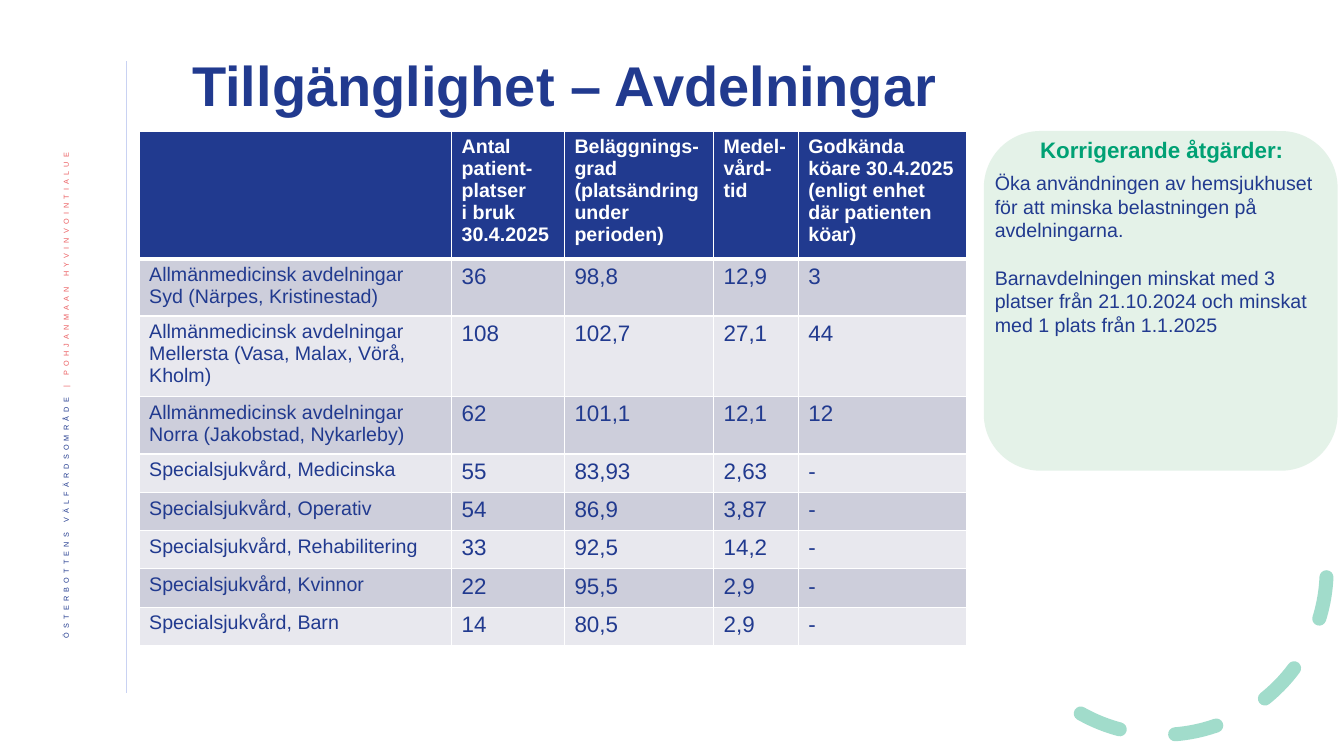
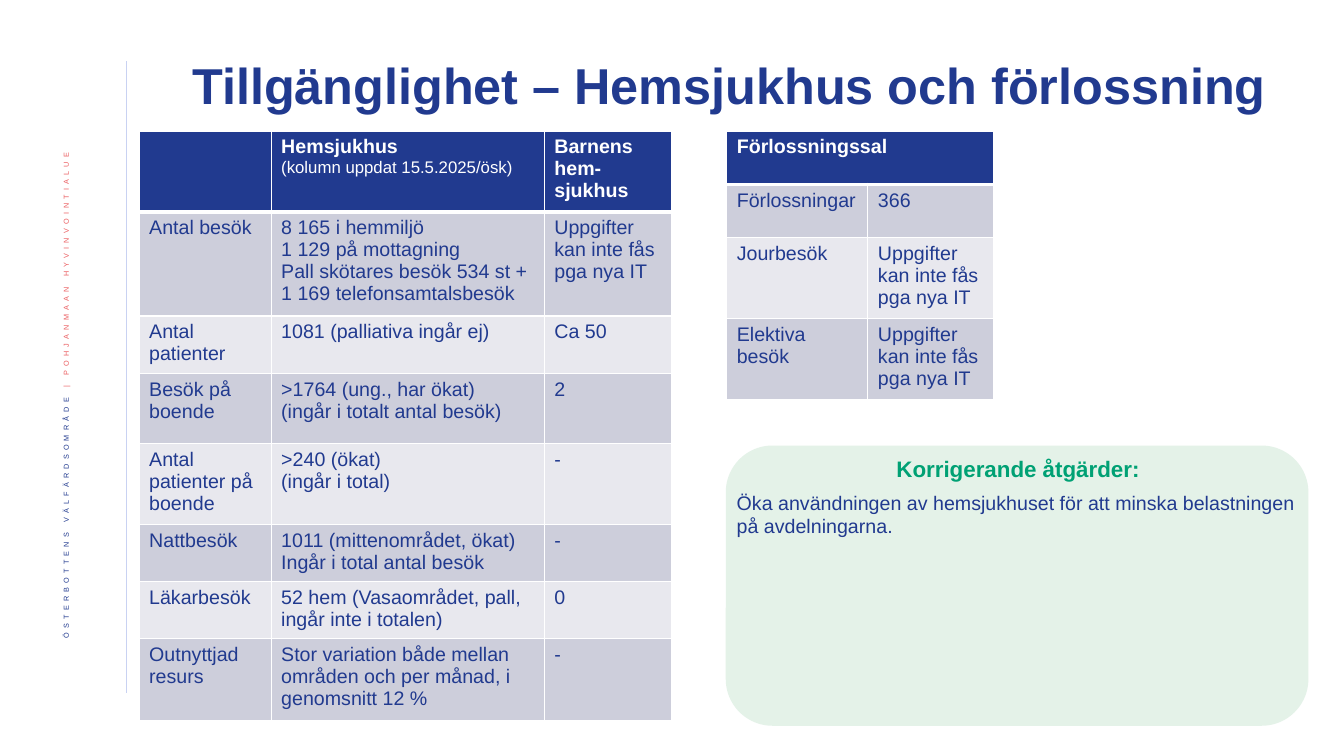
from lxml.etree import SubElement
from pptx import Presentation
from pptx.dml.color import RGBColor
from pptx.enum.dml import MSO_LINE
from pptx.enum.shapes import MSO_CONNECTOR, MSO_SHAPE
from pptx.enum.text import MSO_ANCHOR, PP_ALIGN
from pptx.oxml.ns import qn
from pptx.util import Inches, Pt

HUES = {
    "navy": "213A8F", "green": "00A174", "mint": "85C598", "coral": "EB5C5F",
    "rule": "C9D2F2", "white": "FFFFFF", "dark": "CDCEDB", "light": "E8E8EE",
}
FONT = "Arial"
UNIT = 0.1  # side of a grid square, in inches
WIDE, HIGH = 133.33, 75
TOP = 13  # row where the content starts


def grid(*cells):
    return [Inches(cell * UNIT) for cell in cells]


def hue(name):
    return RGBColor.from_string(HUES[name])


def fade(shape, share):
    """Make the shape's own colours opaque by the given percentage only."""
    for tint in shape._element.iter(qn("a:srgbClr")):
        SubElement(tint, qn("a:alpha"), val=str(share * 1000))


def edge(cell, low):
    """Draw white cell borders; low is the width of the bottom one."""
    props = cell._tc.get_or_add_tcPr()
    for spot, (side, size) in enumerate(zip("LRTB", (1, 1, 1, low))):
        line = SubElement(props, qn(f"a:ln{side}"), w=str(Pt(size)))
        fill = SubElement(line, qn("a:solidFill"))
        SubElement(fill, qn("a:srgbClr"), val=HUES["white"])
        props.insert(spot, line)


class Deck:
    def __init__(self):
        self.file = Presentation()
        self.file.slide_width, self.file.slide_height = grid(WIDE, HIGH)
        self.page = None

    def start(self, title, size, width):
        self.page = self.file.slides.add_slide(self.file.slide_layouts[6])
        self.band()
        frame = self.box(18.1, 4.5, width, 8.5, MSO_ANCHOR.MIDDLE)
        frame.text = title
        frame.paragraphs[0].line_spacing = 0.9
        self.style(frame.paragraphs[0], size, "navy", True)

    def style(self, item, size, tint, bold=False):
        font = item.font
        font.name, font.size, font.bold = FONT, Pt(size), bold
        font.color.rgb = hue(tint)

    def box(self, x, y, w, h, anchor=MSO_ANCHOR.TOP):
        frame = self.page.shapes.add_textbox(*grid(x, y, w, h)).text_frame
        frame.word_wrap = True
        frame.vertical_anchor = anchor
        return frame

    def band(self):
        """Add the thin rule and the upright name at the left edge."""
        rule = self.page.shapes.add_connector(
            MSO_CONNECTOR.STRAIGHT, *grid(12.5, 6.1, 12.5, 68.8))
        rule.line.color.rgb = hue("rule")
        rule.line.width = Pt(0.5)
        SubElement(rule._element.spPr, qn("a:effectLst"))
        frame = self.box(4.2, 14.2, 5.2, 57.3, MSO_ANCHOR.MIDDLE)
        frame._txBody.bodyPr.set("vert", "vert270")
        para = frame.paragraphs[0]
        para.alignment, para.line_spacing = PP_ALIGN.RIGHT, 0.9
        for text, tint in (("ÖSTERBOTTENS VÄLFÄRDSOMRÅDE ", "navy"),
                           ("| POHJANMAAN HYVINVOINTIALUE", "coral")):
            run = para.add_run()
            run.text = text
            self.style(run, 9, tint)
            props = run._r.get_or_add_rPr()
            props.set("baseline", "30000")
            props.set("spc", "300")

    def entry(self, para, size, tint, bold=False):
        """Style a cell's paragraph and its end mark, which sets row height."""
        self.style(para, size, tint, bold)
        SubElement(para._p, qn("a:endParaRPr"), sz=str(size * 100))

    def table(self, x, cols, rows, data, size=14):
        """Fill a table; size is the text size right of the first column.

        A row that is shorter than the table has its last cell merged.
        """
        table = self.page.shapes.add_table(
            len(rows), len(cols), *grid(x, TOP, sum(cols), sum(rows))).table
        for col, width in zip(table.columns, grid(*cols)):
            col.width = width
        for row, height in zip(table.rows, grid(*rows)):
            row.height = height
        for r, texts in enumerate(data):
            head = r == 0
            shade = "navy" if head else ("light", "dark")[r % 2]
            for c in range(len(cols)):
                cell = table.cell(r, c)
                cell.fill.solid()
                cell.fill.fore_color.rgb = hue(shade)
                edge(cell, 3 if head else 1)
                if c >= len(texts):
                    continue
                cell.text = texts[c]
                for n, para in enumerate(cell.text_frame.paragraphs):
                    if head:
                        self.entry(para, 12 if n else 14, "white", n == 0)
                    else:
                        self.entry(para, size if c else 14, "navy")
            if len(texts) < len(cols):
                table.cell(r, len(texts) - 1).merge(
                    table.cell(r, len(cols) - 1))

    def card(self, x, y, w, h, notes, drop=0):
        """Add the green card; drop moves its text down."""
        back = self.page.shapes.add_shape(
            MSO_SHAPE.ROUNDED_RECTANGLE, *grid(x, y, w, h))
        back.shadow.inherit = False
        back.fill.solid()
        back.fill.fore_color.rgb = hue("mint")
        back.line.fill.background()
        fade(back, 22)
        frame = self.box(x + 0.1, y + drop, w, h - drop)
        frame.text = "\n".join(["Korrigerande åtgärder:", *notes])
        for n, para in enumerate(frame.paragraphs):
            if n == 0:
                para.alignment, para.space_after = PP_ALIGN.CENTER, Pt(6)
                self.style(para, 16, "green", True)
            else:
                if n > 1:
                    para.space_before = Pt(17)
                self.style(para, 14, "navy")

    def arc(self, x, y, side):
        curve = self.page.shapes.add_shape(
            MSO_SHAPE.ARC, *grid(x, y, side, side))
        curve.shadow.inherit = False
        curve.adjustments[0], curve.adjustments[1] = 158.17, 17.81
        curve.rotation = 98.9
        curve.fill.background()
        curve.line.color.rgb = hue("green")
        curve.line.width = Pt(10)
        curve.line.dash_style = MSO_LINE.DASH
        curve.line._ln.set("cap", "rnd")
        fade(curve, 36)


HOME = "Öka användningen av hemsjukhuset för att minska belastningen på avdelningarna."
LACK = "Uppgifter kan inte fås pga nya IT"

WARDS = [
    ["", "Antal patient-platser\vi bruk 30.4.2025",
     "Beläggnings-grad (platsändring under perioden)", "Medel-vård-tid",
     "Godkända köare 30.4.2025 (enligt enhet där patienten köar)"],
    ["Allmänmedicinsk avdelningar Syd (Närpes, Kristinestad)", "36", "98,8", "12,9", "3"],
    ["Allmänmedicinsk avdelningar Mellersta (Vasa, Malax, Vörå, Kholm)",
     "108", "102,7", "27,1", "44"],
    ["Allmänmedicinsk avdelningar Norra (Jakobstad, Nykarleby)",
     "62", "101,1", "12,1", "12"],
    ["Specialsjukvård, Medicinska", "55", "83,93", "2,63", "-"],
    ["Specialsjukvård, Operativ", "54", "86,9", "3,87", "-"],
    ["Specialsjukvård, Rehabilitering", "33", "92,5", "14,2", "-"],
    ["Specialsjukvård, Kvinnor", "22", "95,5", "2,9", "-"],
    ["Specialsjukvård, Barn", "14", "80,5", "2,9", "-"],
]
VISITS = [
    ["", "Hemsjukhus\n(kolumn uppdat 15.5.2025/ösk)", "Barnens hem-sjukhus"],
    ["Antal besök", "8 165 i hemmiljö\n1 129 på mottagning\n"
     "Pall skötares besök 534 st + 1 169 telefonsamtalsbesök", LACK],
    ["Antal patienter", "1081 (palliativa ingår ej)", "Ca 50"],
    ["Besök på boende", ">1764 (ung., har ökat)\n(ingår i totalt antal besök)", "2"],
    ["Antal patienter på boende", ">240 (ökat)\n(ingår i total)", "-"],
    ["Nattbesök", "1011 (mittenområdet, ökat)\nIngår i total antal besök", "-"],
    ["Läkarbesök", "52 hem (Vasaområdet, pall, ingår inte i totalen)", "0"],
    ["Outnyttjad resurs",
     "Stor variation både mellan områden och per månad, i genomsnitt 12 %", "-"],
]
BIRTHS = [
    ["Förlossningssal"],
    ["Förlossningar", "366"],
    ["Jourbesök", LACK],
    ["Elektiva besök", LACK],
]


def main():
    deck = Deck()
    deck.start("Tillgänglighet – Avdelningar", 40, 102)
    deck.card(97.6, TOP, 35.1, 33.7, [
        HOME,
        "Barnavdelningen minskat med 3 platser från 21.10.2024 "
        "och minskat med 1 plats från 1.1.2025"])
    deck.arc(98.9, 40.2, 32.7)
    deck.table(13.8, [31, 11.2, 14.8, 8.4, 16.7],
               [11.8, 5.5, 7.5, 5.4] + [3.8] * 5, WARDS, size=16)

    deck.start("Tillgänglighet – Hemsjukhus och förlossning", 36, 109.8)
    deck.table(13.8, [13.1, 27.1, 12.6],
               [7.5, 9.7, 5.4, 7, 7.5, 5.4, 5.4, 8.1], VISITS)
    deck.table(72.1, [14, 12.5], [5.3, 5.3, 7.5, 7.5], BIRTHS)
    deck.card(72, 44.2, 57.8, 27.8, [HOME], drop=0.5)
    deck.file.save("out.pptx")


if __name__ == "__main__":
    main()
